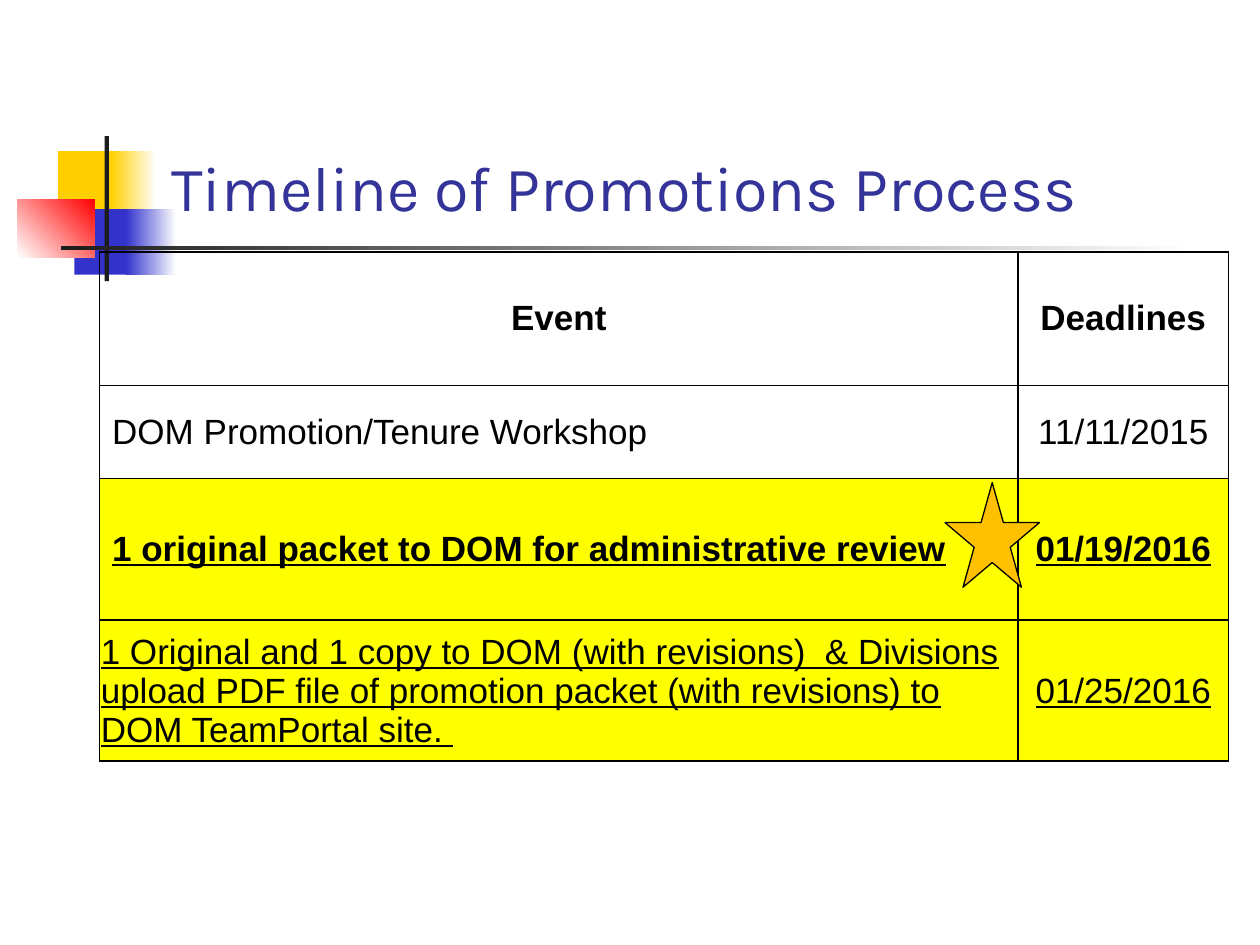
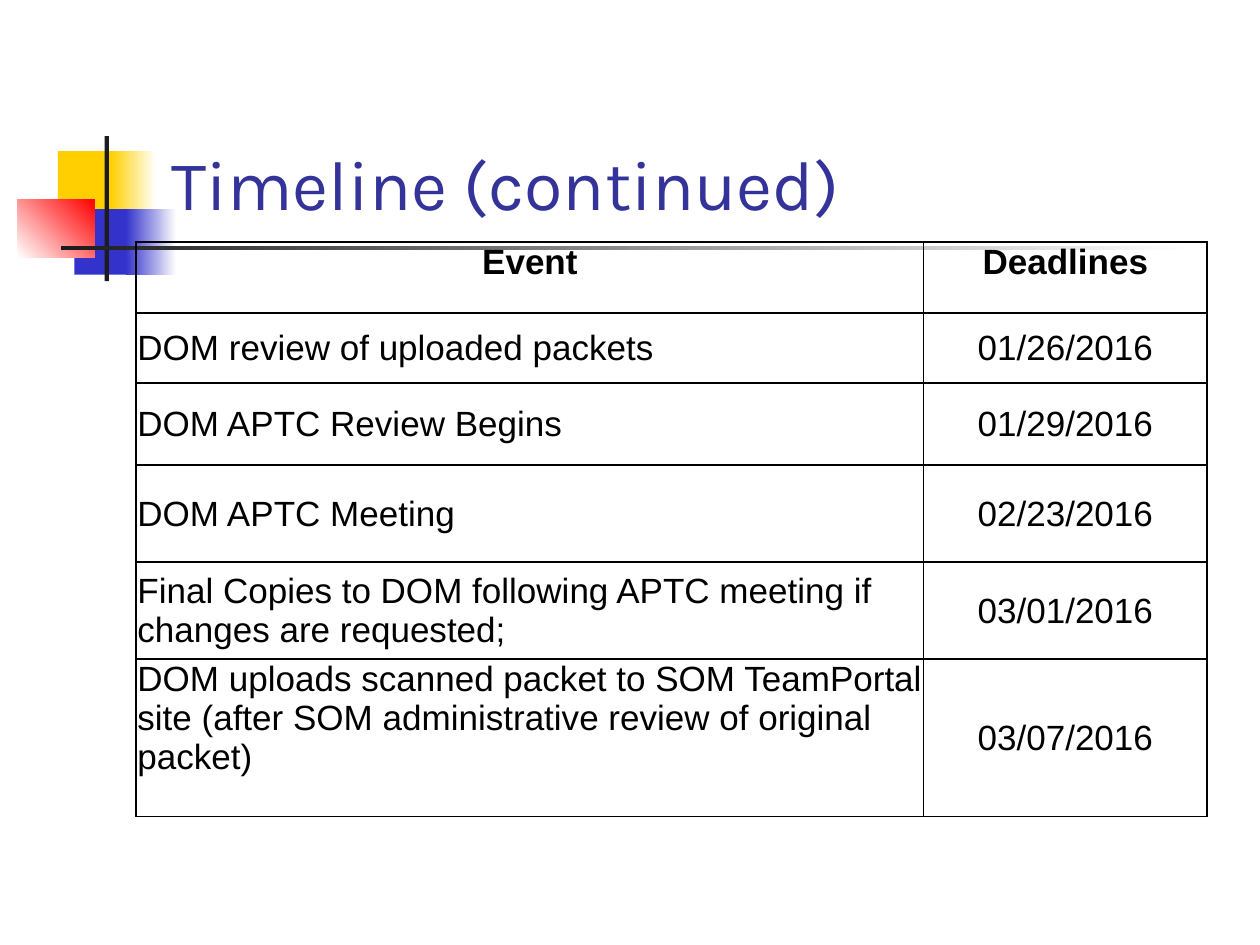
import lxml.etree
import pptx
import pptx.dml.color
import pptx.enum.shapes
import pptx.enum.text
import pptx.oxml.ns
import pptx.util

Pt = pptx.util.Pt
Anchor = pptx.enum.text.MSO_ANCHOR
Align = pptx.enum.text.PP_ALIGN
Shape = pptx.enum.shapes.MSO_SHAPE

BLACK, WHITE, CHARCOAL = "000000", "FFFFFF", "1C1C1C"
YELLOW, BLUE, RED = "FFCF01", "3333CC", "FF0000"
TITLE_BLUE, HIGHLIGHT, STAR_GOLD = "333399", "FFFF00", "FFC000"
TIGHT = (0.72, 0.72, 0.72, 0)
ROOMY = (7.2, 3.6, 7.2, 3.6)

# Left, top, width, height, colours from start to end, gradient angle
DECORATION = [
    (33.1, 86.4, 34.6, 37.4, [YELLOW], 0),
    (63.4, 86.4, 25.9, 37.4, [YELLOW, WHITE], 0),
    (42.5, 119.5, 33.1, 37.4, [BLUE], 0),
    (72, 119.5, 28.8, 37.4, [BLUE, WHITE], 0),
    (10.1, 113.8, 43.9, 33.1, [WHITE, RED], 45),
    (59.8, 77.8, 2.5, 82.8, [CHARCOAL], 0),
    (34.6, 140.4, 648, 2.5, [CHARCOAL, WHITE], 0),
]


def color(value):
    return pptx.dml.color.RGBColor.from_string(value)


class Deck:
    title_font = "Karla"
    body_font = "Arial"
    body_size = 20

    def __init__(self):
        self.presentation = pptx.Presentation()
        self.presentation.slide_width = Pt(720)
        self.presentation.slide_height = Pt(540)
        self.slide = None

    def new_slide(self, title, size):
        layout = self.presentation.slide_layouts[5]
        self.slide = self.presentation.slides.add_slide(layout)
        for left, top, width, height, colors, angle in DECORATION:
            self.shape(Shape.RECTANGLE, left, top, width, height, colors, angle)
        self.title(title, size)

    def title(self, text, size):
        shape = self.slide.shapes.title
        shape.left, shape.top, shape.width, shape.height = map(Pt, (90.7, 16.6, 613.4, 115.2))
        shape.element.getparent().append(shape.element)  # in front of the decoration
        frame = shape.text_frame
        frame.text = text
        frame.auto_size = pptx.enum.text.MSO_AUTO_SIZE.NONE
        frame.vertical_anchor = Anchor.BOTTOM
        paragraph = frame.paragraphs[0]
        paragraph.alignment = Align.LEFT
        self.style(paragraph, self.title_font, size, TITLE_BLUE)

    def style(self, paragraph, name, size, value, bold=False, underline=False):
        font = paragraph.font
        font.name, font.size, font.bold, font.underline = name, Pt(size), bold, underline
        font.color.rgb = color(value)

    def shape(self, kind, left, top, width, height, colors, angle=0, line=None):
        shape = self.slide.shapes.add_shape(kind, Pt(left), Pt(top), Pt(width), Pt(height))
        shape.shadow.inherit = False
        if len(colors) == 1:
            shape.fill.solid()
            shape.fill.fore_color.rgb = color(colors[0])
        else:
            shape.fill.gradient()
            shape.fill.gradient_angle = angle
            for stop, value in zip(shape.fill.gradient_stops, colors):
                stop.color.rgb = color(value)
        if line:
            shape.line.color.rgb = color(line)
            shape.line.width = Pt(0.75)
        else:
            shape.line.fill.background()

    def table(self, left, top, widths, rows):
        """Each row is (height, event, deadline, options for both cells)."""
        frame = self.slide.shapes.add_table(
            len(rows), len(widths), Pt(left), Pt(top),
            Pt(sum(widths)), Pt(sum(row[0] for row in rows)))
        table = frame.table
        table.first_row = table.horz_banding = False
        for column, width in zip(table.columns, widths):
            column.width = Pt(width)
        for index, (height, event, deadline, options) in enumerate(rows):
            table.rows[index].height = Pt(height)
            event_align = Align.CENTER if index == 0 else Align.LEFT
            self.cell(table.cell(index, 0), event, event_align, **options)
            # Only a header's deadline follows the anchor of its row
            if index:
                options = {**options, "anchor": Anchor.MIDDLE}
            self.cell(table.cell(index, 1), deadline, Align.CENTER, **options)

    def cell(self, cell, text, align, anchor=Anchor.MIDDLE, margins=TIGHT,
             fill=None, bold=False, underline=False):
        cell.text = text
        cell.vertical_anchor = anchor
        cell.margin_left, cell.margin_top, cell.margin_right, cell.margin_bottom = map(Pt, margins)
        paragraph = cell.text_frame.paragraphs[0]
        paragraph.alignment = align
        self.style(paragraph, self.body_font, self.body_size, BLACK, bold, underline)
        self.borders(cell)
        if fill:
            cell.fill.solid()
            cell.fill.fore_color.rgb = color(fill)
        else:
            cell.fill.background()

    def borders(self, cell):
        qn = pptx.oxml.ns.qn
        properties = cell._tc.get_or_add_tcPr()
        for side in ("a:lnL", "a:lnR", "a:lnT", "a:lnB"):
            line = lxml.etree.SubElement(properties, qn(side), w=str(Pt(1)))
            solid = lxml.etree.SubElement(line, qn("a:solidFill"))
            lxml.etree.SubElement(solid, qn("a:srgbClr"), val=BLACK)


def main():
    deck = Deck()

    # First deadlines, with the packet submissions highlighted
    deck.new_slide("Timeline of Promotions Process", 36)
    deck.table(56.9, 144, [524.9, 120.2], [
        (76.3, "Event", "Deadlines", dict(margins=ROOMY, bold=True)),
        (53.3, "DOM Promotion/Tenure Workshop", "11/11/2015", dict(margins=ROOMY)),
        (80.6, "1 original packet to DOM for administrative review", "01/19/2016",
         dict(margins=ROOMY, fill=HIGHLIGHT, bold=True, underline=True)),
        (80.6, "1 Original and 1 copy to DOM (with revisions)  & Divisions upload PDF file "
               "of promotion packet (with revisions) to DOM TeamPortal site. ", "01/25/2016",
         dict(fill=HIGHLIGHT, underline=True)),
    ])
    deck.shape(Shape.STAR_5_POINT, 540, 275.8, 54, 59.8, [STAR_GOLD], line=BLACK)

    # Review and final deadlines
    deck.new_slide("Timeline (continued)", 40)
    deck.table(77.8, 138.2, [450, 162], [
        (40.7, "Event", "Deadlines", dict(anchor=Anchor.TOP, bold=True)),
        (40, "DOM review of uploaded packets", "01/26/2016", {}),
        (46.8, "DOM APTC Review Begins", "01/29/2016", {}),
        (55.4, "DOM APTC Meeting", "02/23/2016", {}),
        (55.4, "Final Copies to DOM following APTC meeting if changes are requested;",
         "03/01/2016", {}),
        (90, "DOM uploads scanned packet to SOM TeamPortal site (after SOM administrative "
             "review of original packet)", "03/07/2016", dict(anchor=Anchor.TOP)),
    ])

    deck.presentation.save("out.pptx")


if __name__ == "__main__":
    main()
